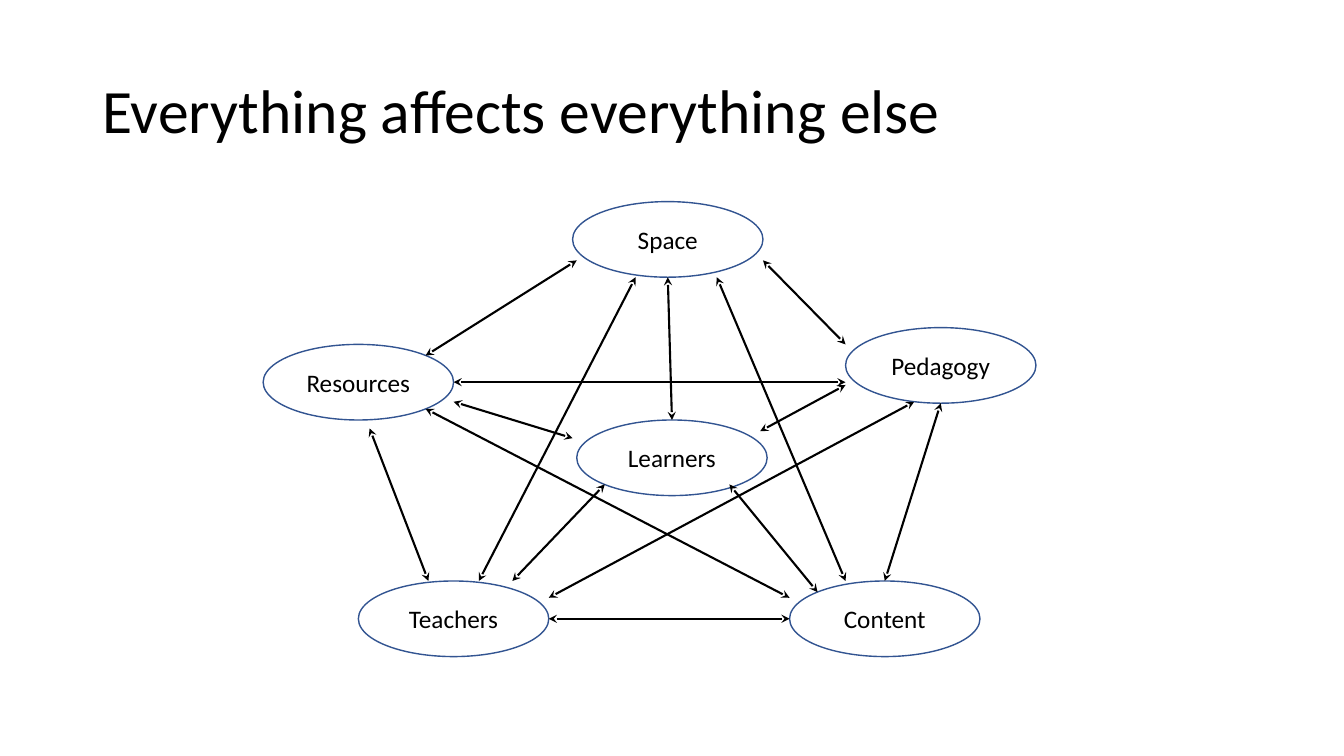
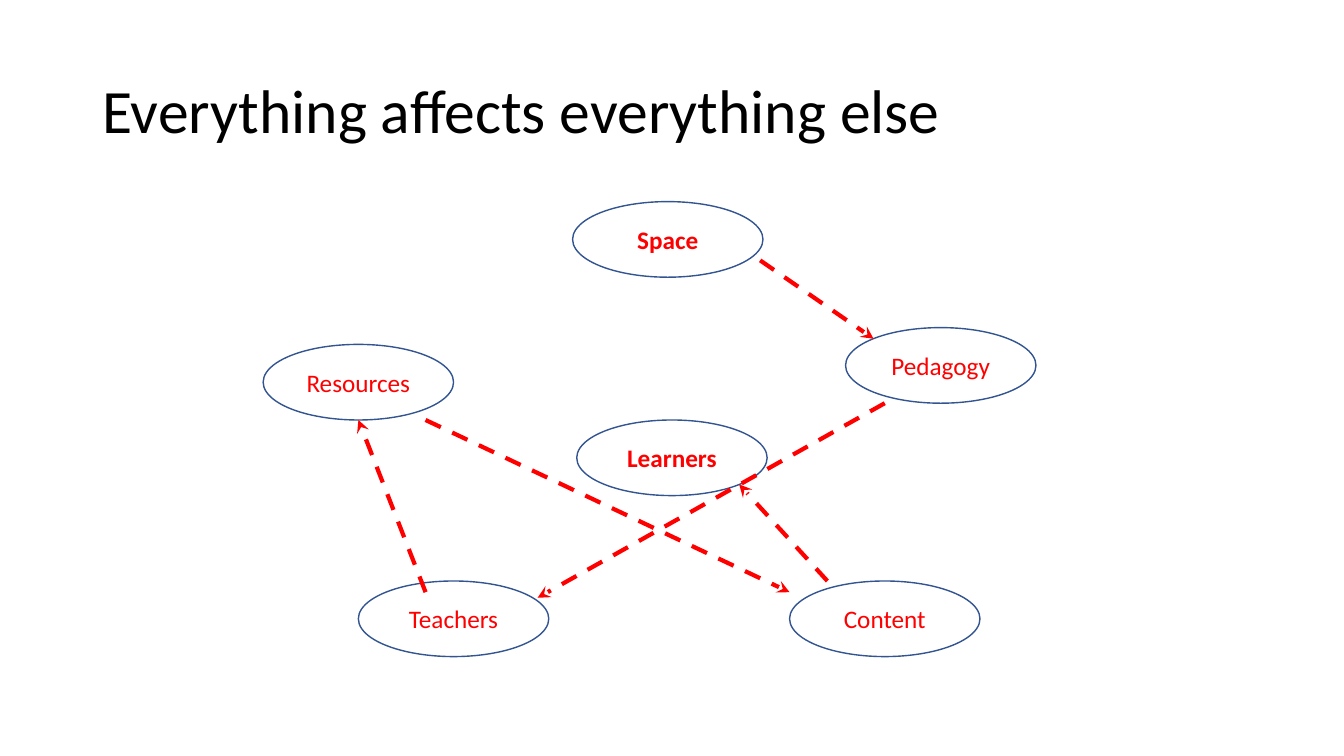
from dataclasses import dataclass

from lxml.etree import SubElement
from pptx import Presentation
from pptx.dml.color import RGBColor as RGB
from pptx.enum.dml import MSO_LINE as DASH
from pptx.enum.shapes import MSO_CONNECTOR as LINK, MSO_SHAPE as SHAPE
from pptx.enum.text import MSO_ANCHOR as ANCHOR, PP_ALIGN as ALIGN
from pptx.oxml.ns import qn
from pptx.util import Pt


@dataclass(frozen=True)
class Theme:
    font: str = "Calibri"
    title_size: float = 44
    label_size: float = 18
    ink: RGB = RGB(0x00, 0x00, 0x00)
    outline: RGB = RGB(0x32, 0x54, 0x91)
    accent: RGB = RGB(0xFF, 0x00, 0x00)


THEME = Theme()
TITLE = "Everything affects everything else"
OVAL_WIDTH, OVAL_HEIGHT = 136, 54

# Centre of each factor
CENTRES = {
    "Resources": (256, 273),
    "Learners": (480, 327),
    "Teachers": (324, 442),
    "Content": (632, 442),
    "Pedagogy": (672, 261),
    "Space": (477, 171),
}

# Each end is a factor and an offset from its centre
MUTUAL_EFFECTS = [
    (("Resources", 48, -19), ("Space", -65, 15)),
    (("Teachers", 18, -27), ("Space", -23, 27)),
    (("Space", 35, 27), ("Content", -28, -27)),
    (("Pedagogy", -68, -15), ("Space", 68, 15)),
    (("Resources", 68, 0), ("Pedagogy", -68, 12)),
    (("Resources", 48, 19), ("Content", -68, -15)),
    (("Space", 0, 27), ("Learners", 0, -27)),
    (("Resources", 68, 14), ("Learners", -71, -14)),
    (("Resources", 8, 33), ("Teachers", -18, -27)),
    (("Teachers", 42, -27), ("Learners", -48, 19)),
    (("Teachers", 68, 0), ("Content", -68, 0)),
    (("Teachers", 68, -15), ("Pedagogy", -19, 26)),
    (("Content", 0, -27), ("Pedagogy", 0, 27)),
    (("Learners", 63, -19), ("Pedagogy", -68, 14)),
    (("Learners", 41, 19), ("Content", -48, -19)),
]
CHAIN = [
    (("Space", 66, 15), ("Pedagogy", -48, -19)),
    (("Pedagogy", -40, 27), ("Teachers", 60, -15)),
    (("Teachers", -20, -19), ("Resources", 0, 27)),
    (("Resources", 48, 27), ("Content", -68, -19)),
    (("Content", -41, -27), ("Learners", 48, 19)),
]


class Deck:
    def __init__(self, theme):
        self.theme = theme
        self.file = Presentation()
        self.file.slide_width, self.file.slide_height = Pt(960), Pt(540)
        self.slide = None

    def set_text(self, frame, text, **style):
        frame.text = text
        font = frame.paragraphs[0].runs[0].font
        font.color.rgb = style.pop("color")
        for name, value in {"name": self.theme.font, **style}.items():
            setattr(font, name, value)

    def start_slide(self, title):
        self.slide = self.file.slides.add_slide(self.file.slide_layouts[6])
        frame = self.slide.shapes.add_textbox(Pt(66), Pt(29), Pt(828), Pt(104)).text_frame
        frame.word_wrap = True
        frame.vertical_anchor = ANCHOR.MIDDLE
        self.set_text(frame, title, size=Pt(self.theme.title_size), color=self.theme.ink)
        frame.paragraphs[0].line_spacing = 0.9

    def factor(self, name, color, bold):
        x, y = CENTRES[name]
        oval = self.slide.shapes.add_shape(
            SHAPE.OVAL, Pt(x - OVAL_WIDTH / 2), Pt(y - OVAL_HEIGHT / 2),
            Pt(OVAL_WIDTH), Pt(OVAL_HEIGHT))
        oval.shadow.inherit = False
        oval.fill.background()
        oval.line.color.rgb = self.theme.outline
        oval.line.width = Pt(1)
        frame = oval.text_frame
        layout = {"word_wrap": False, "vertical_anchor": ANCHOR.MIDDLE,
                  "margin_top": 0, "margin_bottom": 0}
        for key, value in layout.items():
            setattr(frame, key, value)
        self.set_text(frame, name, size=Pt(self.theme.label_size), color=color, bold=bold)
        frame.paragraphs[0].alignment = ALIGN.CENTER

    def arrow(self, start, end, color, width, dash=None, ends=("tailEnd",)):
        points = [Pt(base + shift) for name, *offset in (start, end)
                  for base, shift in zip(CENTRES[name], offset)]
        effect = self.slide.shapes.add_connector(LINK.STRAIGHT, *points)
        effect.line.color.rgb = color
        effect.line.width = Pt(width)
        if dash:
            effect.line.dash_style = dash
        properties = effect.element.spPr
        for tag in ends:
            SubElement(properties.find(qn("a:ln")), qn(f"a:{tag}"), type="stealth")
        SubElement(properties, qn("a:effectLst"))

    def diagram(self, color, effects, bold_factors=(), **arrow_style):
        self.start_slide(TITLE)
        for name in CENTRES:
            self.factor(name, color, name in bold_factors)
        for start, end in effects:
            self.arrow(start, end, color, **arrow_style)


def main():
    deck = Deck(THEME)
    # Every factor affects the others
    deck.diagram(THEME.ink, MUTUAL_EFFECTS, width=1.5, ends=("headEnd", "tailEnd"))
    # One chain from space to learners
    deck.diagram(THEME.accent, CHAIN, ("Space", "Learners"), width=3, dash=DASH.DASH)
    deck.file.save("out.pptx")


if __name__ == "__main__":
    main()
